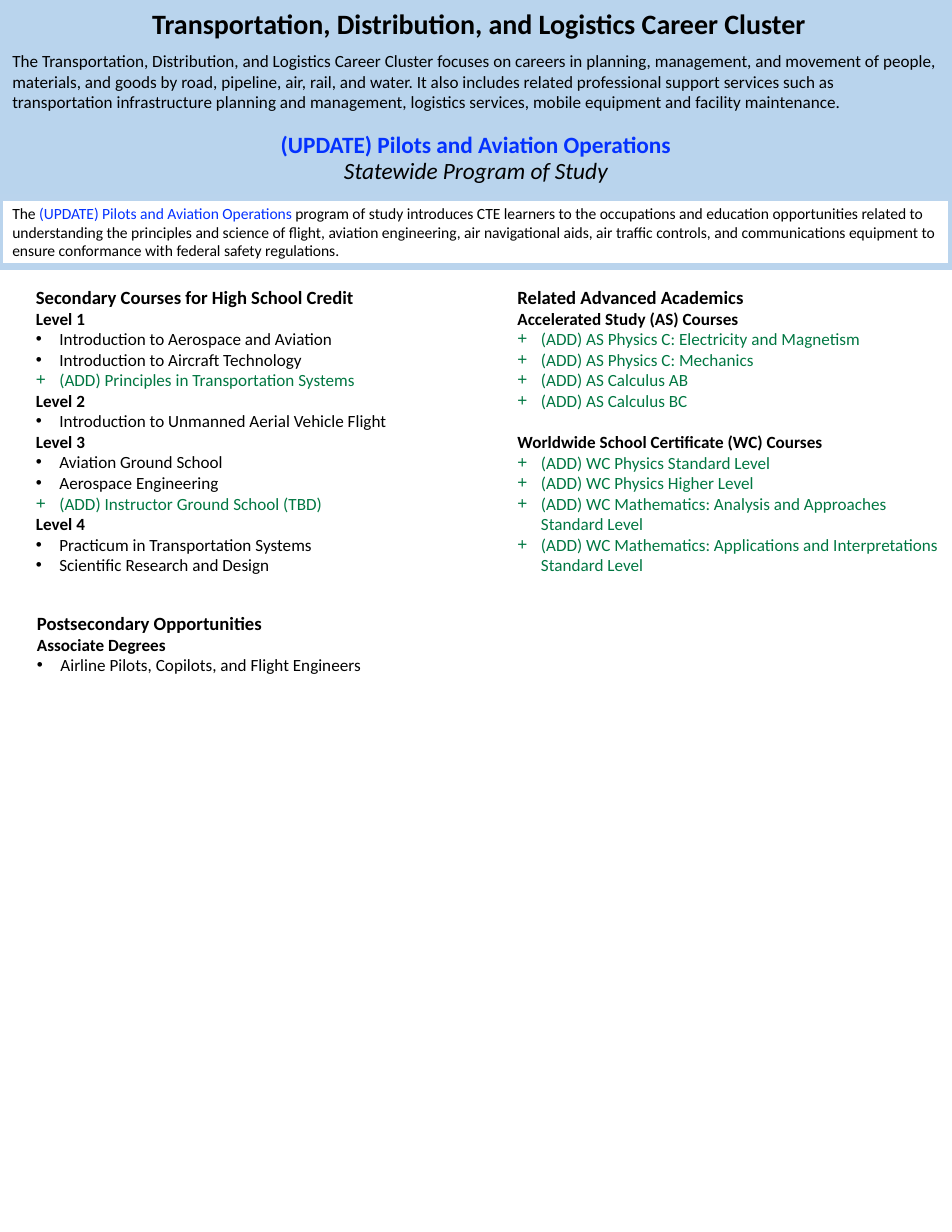
from pptx import Presentation
from pptx.dml.color import RGBColor
from pptx.enum.shapes import MSO_SHAPE
from pptx.enum.text import MSO_ANCHOR, MSO_AUTO_SIZE, PP_ALIGN
from pptx.util import Inches, Pt
from lxml.etree import SubElement
from pptx.oxml.ns import qn

BLACK, BLUE, GREEN, SKY = "000000", "0432FF", "007742", "B9D4ED"


def tint(code):
    return RGBColor.from_string(code)


def write(frame, text, size=11, color=BLACK, bold=False, italic=False,
          bullet=None, align=PP_ALIGN.LEFT, before=0, after=0, lead=1.0, join=False):
    para = frame.paragraphs[-1]
    if para.runs and not join:
        para = frame.add_paragraph()
    if not join:
        para.alignment = align
        para.line_spacing = lead
        para.space_before, para.space_after = Pt(before), Pt(after)
        props = para._p.get_or_add_pPr()
        indent = Inches(0.21) if bullet else 0
        props.set("marL", str(indent))
        props.set("indent", str(-indent))
        if bullet:
            SubElement(props, qn("a:buFont"), typeface="Arial")
            SubElement(props, qn("a:buChar"), char=bullet)
        else:
            SubElement(props, qn("a:buNone"))
    run = para.add_run()
    run.text = text
    font = run.font
    font.name, font.size, font.bold, font.italic = "Calibri", Pt(size), bold, italic
    font.color.rgb = tint(color)


deck = Presentation()
deck.slide_width, deck.slide_height = Inches(8.5), Inches(11)
slide = deck.slides.add_slide(deck.slide_layouts[3])
shapes = slide.shapes

title, left, right = slide.placeholders
head = shapes.add_shape(MSO_SHAPE.RECTANGLE, 0, 0, Inches(8.5), Inches(1.07))
about = shapes.add_shape(MSO_SHAPE.RECTANGLE, 0, Inches(1.76), Inches(8.5), Inches(0.62))
after = shapes.add_textbox(Inches(0.22), Inches(5.4), Inches(3.98), Inches(1.98))

for shape, x, y, wide, high in [
    (title, 0, 1.07, 8.5, 0.7),
    (left, 0.22, 2.5, 3.98, 2.78),
    (right, 4.52, 2.5, 3.98, 3.9),
]:
    shape.left, shape.top = Inches(x), Inches(y)
    shape.width, shape.height = Inches(wide), Inches(high)

for shape in shapes:
    frame = shape.text_frame
    frame.word_wrap = True
    frame.auto_size = MSO_AUTO_SIZE.NONE
    frame.vertical_anchor = MSO_ANCHOR.TOP
    side, edge = (0.1, 0.05) if shape.is_placeholder else (0.11, 0.06)
    frame.margin_left = frame.margin_right = Inches(side)
    frame.margin_top = frame.margin_bottom = Inches(edge)

for shape in (title, head):
    shape.fill.solid()
    shape.fill.fore_color.rgb = tint(SKY)
head.line.fill.background()
about.fill.background()
about.line.color.rgb = tint("BAD4ED")
about.line.width = Pt(4.5)
for shape in (head, about):
    shape.shadow.inherit = False

title.text_frame.vertical_anchor = MSO_ANCHOR.MIDDLE
write(title.text_frame, "(UPDATE) Pilots and Aviation Operations", size=15,
      color=BLUE, bold=True, align=PP_ALIGN.CENTER, lead=0.9)
write(title.text_frame, "Statewide Program of Study", size=15, italic=True,
      align=PP_ALIGN.CENTER, lead=0.9)

write(head.text_frame, " Transportation, Distribution, and Logistics Career Cluster",
      size=18, bold=True, align=PP_ALIGN.CENTER, after=6.6)
write(head.text_frame,
      "The Transportation, Distribution, and Logistics Career Cluster focuses on careers in "
      "planning, management, and movement of people, materials, and goods by road, pipeline, "
      "air, rail, and water. It also includes related professional support services such as "
      "transportation infrastructure planning and management, logistics services, mobile "
      "equipment and facility maintenance.")

write(about.text_frame, "The ", size=10)
write(about.text_frame, "(UPDATE) Pilots and Aviation Operations ", size=10,
      color=BLUE, join=True)
write(about.text_frame,
      "program of study introduces CTE learners to the occupations and education "
      "opportunities related to understanding the principles and science of flight, aviation "
      "engineering, air navigational aids, air traffic controls, and communications equipment "
      "to ensure conformance with federal safety regulations.", size=10, join=True)

lists = [
    (left, "Secondary Courses for High School Credit", 0, [
        ("Level 1", ["Introduction to Aerospace and Aviation",
                     "Introduction to Aircraft Technology",
                     "(ADD) Principles in Transportation Systems"]),
        ("Level 2", ["Introduction to Unmanned Aerial Vehicle Flight"]),
        ("Level 3", ["Aviation Ground School",
                     "Aerospace Engineering",
                     "(ADD) Instructor Ground School (TBD)"]),
        ("Level 4", ["Practicum in Transportation Systems",
                     "Scientific Research and Design"]),
    ]),
    (after, "Postsecondary Opportunities", 0, [
        ("Associate Degrees", ["Airline Pilots, Copilots, and Flight Engineers"]),
    ]),
    (right, "Related Advanced Academics", 13.4, [
        ("Accelerated Study (AS) Courses", [
            "(ADD) AS Physics C: Electricity and Magnetism",
            "(ADD) AS Physics C: Mechanics",
            "(ADD) AS Calculus AB",
            "(ADD) AS Calculus BC"]),
        ("Worldwide School Certificate (WC) Courses", [
            "(ADD) WC Physics Standard Level",
            "(ADD) WC Physics Higher Level",
            "(ADD) WC Mathematics: Analysis and Approaches Standard Level",
            "(ADD) WC Mathematics: Applications and Interpretations Standard Level"]),
    ]),
]

for shape, topic, gap, groups in lists:
    frame = shape.text_frame
    write(frame, topic, size=12, bold=True)
    for rank, (name, items) in enumerate(groups):
        write(frame, name, bold=True, before=gap if rank else 0)
        for item in items:
            new = item.startswith("(ADD)")
            write(frame, item, color=GREEN if new else BLACK, bullet="+" if new else "•")

deck.save("out.pptx")
